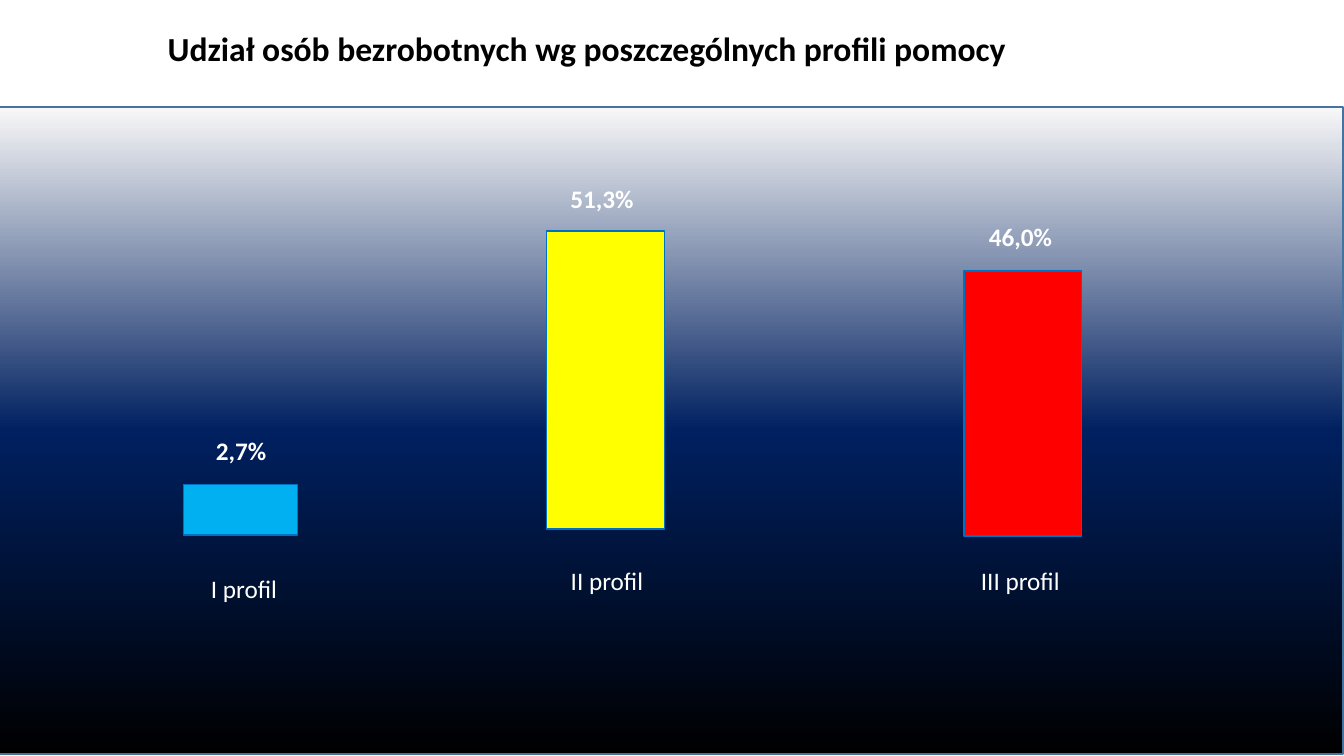
from copy import deepcopy
from dataclasses import dataclass

from pptx import Presentation
from pptx import util as u
from pptx.dml.color import RGBColor
from pptx.enum import shapes, text
from pptx.oxml.ns import qn

TITLE = "Udział osób bezrobotnych wg poszczególnych profili pomocy"

# Boxes are (left, top, width, height) in inches
PROFILES = [
    {"name": "I profil", "share": "2,7%", "color": "00B0F0",
     "bar": (1.82, 4.81, 1.13, 0.5), "name_at": (1.36, 5.64, 2.12), "share_at": (1.45, 4.27, 1.88)},
    {"name": "II profil", "share": "51,3%", "color": "FFFF00",
     "bar": (5.42, 2.29, 1.17, 2.96), "name_at": (5.08, 5.56, 1.88), "share_at": (5.03, 1.77, 1.88)},
    {"name": "III profil", "share": "46,0%", "color": "FF0000",
     "bar": (9.56, 2.69, 1.17, 2.63), "name_at": (9.06, 5.56, 2.12), "share_at": (9.18, 2.15, 1.88)},
]
PANEL = (-0.01, 1.06, 13.33, 6.42)
TITLE_BOX = (-0.41, 0.23, 12.46, 0.5)
LABEL_HEIGHT = 0.4


@dataclass(frozen=True)
class Theme:
    font: str = "Calibri"
    title_size: int = 24
    label_size: int = 18
    dark: str = "000000"
    light: str = "FFFFFF"
    panel_line: str = "43739E"
    bar_line: str = "0070C0"
    gradient: tuple = ((0, "000000"), (0.5, "002060"), (1, "F8F8F8"))


THEME = Theme()


def rgb(value):
    return RGBColor.from_string(value)


def inches(box):
    return [u.Inches(length) for length in box]


def add_rect(page, box, fill=None, line=None):
    rect = page.shapes.add_shape(shapes.MSO_SHAPE.RECTANGLE, *inches(box))
    rect.shadow.inherit = False
    if fill:
        rect.fill.solid()
        rect.fill.fore_color.rgb = rgb(fill)
    if line:
        rect.line.color.rgb = rgb(line)
        rect.line.width = u.Pt(1)
    else:
        rect.line.fill.background()
    return rect


def fill_gradient(rect, stops):
    """Fill with three stops, running from the bottom up."""
    rect.fill.gradient()
    rect.fill.gradient_angle = 90
    stop_list = rect.element.spPr.find(f".//{qn('a:gsLst')}")
    stop_list.insert(1, deepcopy(stop_list[0]))
    for stop, (position, color) in zip(rect.fill.gradient_stops, stops):
        stop.position = position
        stop.color.rgb = rgb(color)


def write(box, words, size=THEME.label_size, color=THEME.light, bold=False):
    frame = box.text_frame
    frame.word_wrap = True
    frame.auto_size = text.MSO_AUTO_SIZE.SHAPE_TO_FIT_TEXT
    frame.vertical_anchor = text.MSO_ANCHOR.TOP
    para = frame.paragraphs[0]
    para.alignment = text.PP_ALIGN.CENTER
    span = para.add_run()
    span.text = words
    span.font.name = THEME.font
    span.font.size = u.Pt(size)
    span.font.bold = bold
    span.font.color.rgb = rgb(color)


def add_label(page, place, words, **style):
    box = page.shapes.add_textbox(*inches((*place, LABEL_HEIGHT)))
    write(box, words, **style)


def main():
    deck = Presentation()
    deck.slide_width, deck.slide_height = inches((13.33, 7.5))
    page = deck.slides.add_slide(deck.slide_layouts[6])

    panel = add_rect(page, PANEL, line=THEME.panel_line)
    fill_gradient(panel, THEME.gradient)
    title = add_rect(page, TITLE_BOX, fill=THEME.light)
    write(title, TITLE, size=THEME.title_size, color=THEME.dark, bold=True)

    for profile in PROFILES:
        add_rect(page, profile["bar"], fill=profile["color"], line=THEME.bar_line)
        add_label(page, profile["name_at"], profile["name"])
        add_label(page, profile["share_at"], profile["share"], bold=True)

    deck.save("out.pptx")


if __name__ == "__main__":
    main()
